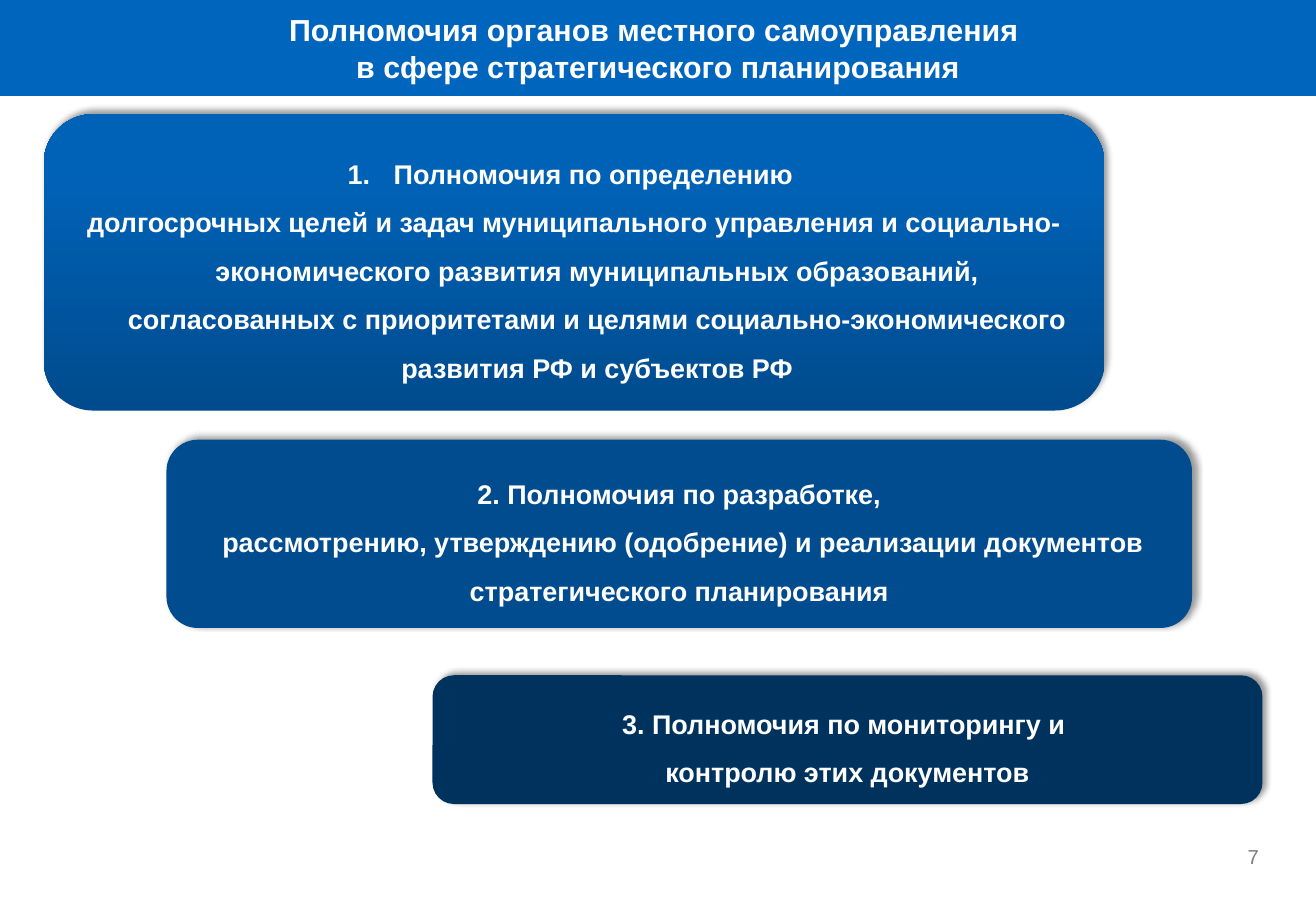
from dataclasses import dataclass

from lxml import etree
from pptx import Presentation
from pptx import util as u
from pptx.dml.color import RGBColor
from pptx.enum import shapes, text
from pptx.oxml import ns

FONT = "Arial"
WHITE = "FFFFFF"


@dataclass
class Power:
    left: float
    top: float
    width: float
    height: float
    fills: list[str]
    lines: list[str]
    numbered: bool = False


POWERS = [
    Power(0.36, 0.94, 8.73, 2.44, ["004B8D", "0062B7"], [
        "Полномочия по определению ",
        "долгосрочных целей и задач муниципального управления и "
        "социально-экономического развития муниципальных образований, "
        "согласованных с приоритетами и целями социально-экономического "
        "развития РФ и субъектов РФ"], numbered=True),
    Power(1.37, 3.62, 8.44, 1.55, ["004C8E"], [
        "2. Полномочия по разработке,",
        " рассмотрению, утверждению (одобрение) и реализации документов "
        "стратегического планирования"]),
    Power(3.56, 5.56, 6.83, 1.06, ["00325E"], [
        "3. Полномочия по мониторингу и ",
        "контролю этих документов"]),
]


def rgb(value: str) -> RGBColor:
    return RGBColor.from_string(value)


def place(s, left: float, top: float, width: float, height: float) -> None:
    s.left, s.top = u.Inches(left), u.Inches(top)
    s.width, s.height = u.Inches(width), u.Inches(height)


def add_child(parent, tag: str, **attrs: str):
    return etree.SubElement(parent, ns.qn(tag), attrs)


def write_lines(tf, lines: list[str], size: float, spacing: float) -> None:
    """Write each line as a centred bold white paragraph."""
    tf.word_wrap = True
    tf.vertical_anchor = text.MSO_ANCHOR.MIDDLE
    for i, line in enumerate(lines):
        p = tf.add_paragraph() if i else tf.paragraphs[0]
        p.alignment = text.PP_ALIGN.CENTER
        p.line_spacing = spacing
        p.space_before = u.Pt(0)
        r = p.add_run()
        r.text = line
        r.font.name, r.font.size, r.font.bold = FONT, u.Pt(size), True
        r.font.color.rgb = rgb(WHITE)


def cast_shadow(s) -> None:
    """Give the shape a soft shadow up and to the right."""
    s.shadow.inherit = False
    effects = s._element.spPr.find(ns.qn("a:effectLst"))
    shadow = add_child(effects, "a:outerShdw", blurRad=str(u.Pt(4)),
                       dist=str(u.Pt(3)), dir="18900000", algn="bl", rotWithShape="0")
    color = add_child(shadow, "a:srgbClr", val="000000")
    add_child(color, "a:alpha", val="40000")


def number_first(tf) -> None:
    """Number the first paragraph and give all a hanging indent."""
    for i, p in enumerate(tf.paragraphs):
        pPr = p._p.get_or_add_pPr()
        pPr.set("marL", str(u.Inches(0.38)))
        pPr.set("indent", str(u.Inches(-0.38)))
        if i == 0:
            add_child(pPr, "a:buFont", typeface="+mj-lt")
            add_child(pPr, "a:buAutoNum", type="arabicPeriod")


def add_power(slide, power: Power) -> None:
    s = slide.shapes.add_shape(shapes.MSO_SHAPE.ROUNDED_RECTANGLE, 0, 0, 0, 0)
    place(s, power.left, power.top, power.width, power.height)
    if len(power.fills) > 1:
        s.fill.gradient()
        s.fill.gradient_angle = 90
        for stop, position, color in zip(s.fill.gradient_stops, (0, 0.8), power.fills):
            stop.position = position
            stop.color.rgb = rgb(color)
    else:
        s.fill.solid()
        s.fill.fore_color.rgb = rgb(power.fills[0])
    s.line.fill.background()
    cast_shadow(s)
    write_lines(s.text_frame, power.lines, 16, 1.5)
    if power.numbered:
        number_first(s.text_frame)


def add_title(slide) -> None:
    s = slide.shapes.title
    place(s, 0, 0, 10.83, 0.79)
    s.fill.solid()
    s.fill.fore_color.rgb = rgb("0065BD")
    s.text_frame.auto_size = text.MSO_AUTO_SIZE.NONE
    write_lines(s.text_frame, ["Полномочия органов местного самоуправления ",
                               "в сфере стратегического планирования"], 18, 1.0)


def add_slide_number(slide) -> None:
    s = slide.shapes.add_textbox(0, 0, 0, 0)
    place(s, 9.84, 6.98, 0.52, 0.14)
    tf = s.text_frame
    tf.word_wrap = False
    tf.vertical_anchor = text.MSO_ANCHOR.MIDDLE
    tf.margin_left = tf.margin_top = tf.margin_right = tf.margin_bottom = 0
    p = tf.paragraphs[0]
    p.alignment = text.PP_ALIGN.RIGHT
    field = add_child(p._p, "a:fld", type="slidenum",
                      id="{B6F15528-21DE-4FAA-801E-634DDDAF4B2B}")
    rPr = add_child(field, "a:rPr", lang="ru-RU", sz="1200")
    add_child(add_child(rPr, "a:solidFill"), "a:srgbClr", val="7F7F7F")
    add_child(rPr, "a:latin", typeface=FONT)
    add_child(field, "a:t").text = "7"


def main() -> None:
    prs = Presentation()
    prs.slide_width, prs.slide_height = u.Inches(10.83), u.Inches(7.5)
    prs.element.set("firstSlideNum", "7")
    slide = prs.slides.add_slide(prs.slide_layouts[5])
    add_title(slide)
    for power in POWERS:
        add_power(slide, power)
    add_slide_number(slide)
    prs.save("out.pptx")


if __name__ == "__main__":
    main()
